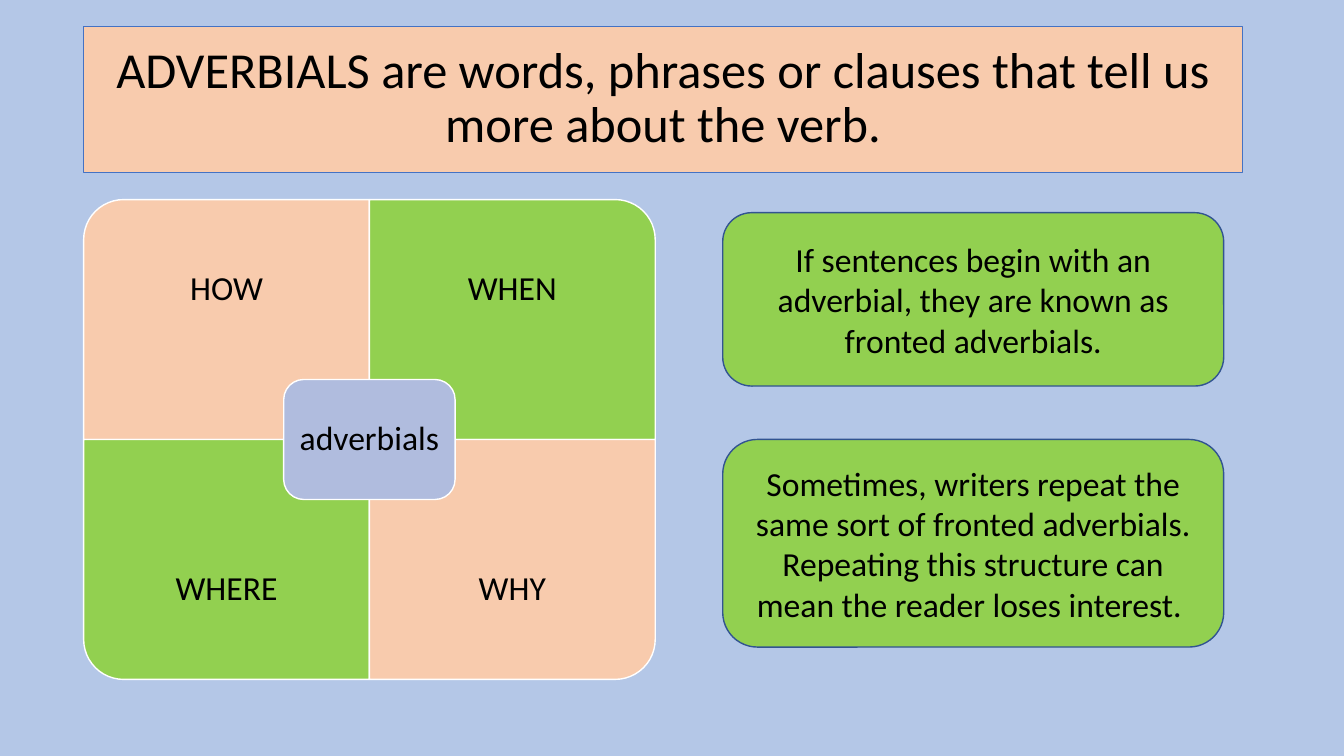
"""Build a slide that explains adverbials with a four-part matrix and two notes."""
import pptx
import pptx.util
import pptx.dml.color
import pptx.enum.shapes
import pptx.enum.text

Inches, Pt = pptx.util.Inches, pptx.util.Pt
SHAPE = pptx.enum.shapes.MSO_SHAPE

PEACH, GREEN, LILAC, SKY = "F8CBAD", "92D050", "B0BCDE", "B4C7E7"
WHITE, BLACK, BLUE, NAVY = "FFFFFF", "000000", "4472C4", "325491"

TITLE = "ADVERBIALS are words, phrases or clauses that tell us more about the verb."
CENTRE = "adverbials"
QUADRANTS = [
    ("HOW", 0, 0, 270, PEACH),
    ("WHEN", 1, 0, 0, GREEN),
    ("WHERE", 0, 1, 180, GREEN),
    ("WHY", 1, 1, 90, PEACH),
]
NOTES = [
    ("If sentences begin with an adverbial, they are known as fronted adverbials.", 2.11, 1.72),
    ("Sometimes, writers repeat the same sort of fronted adverbials. "
     "Repeating this structure can mean the reader loses interest. ", 4.36, 2.06),
]

LEFT, TOP, QUAD_W, QUAD_H = 0.83, 1.98, 2.835, 2.38
LABEL_H = 1.78
HUB_W, HUB_H = 1.7, 1.19
NOTE_X, NOTE_W = 7.17, 4.97


def rgb(color):
    return pptx.dml.color.RGBColor.from_string(color)


def add_box(kind, x, y, w, h, fill, line, weight=1):
    sp = s.shapes.add_shape(kind, Inches(x), Inches(y), Inches(w), Inches(h))
    sp.shadow.inherit = False
    sp.fill.solid()
    sp.fill.fore_color.rgb = rgb(fill)
    sp.line.color.rgb = rgb(line)
    sp.line.width = Pt(weight)
    return sp


def write(sp, text, size=24, spacing=0.9, inset=None):
    tf = sp.text_frame
    tf.word_wrap = True
    tf.vertical_anchor = pptx.enum.text.MSO_ANCHOR.MIDDLE
    if inset is not None:
        tf.margin_left = tf.margin_right = tf.margin_top = tf.margin_bottom = Inches(inset)
    p = tf.paragraphs[0]
    p.text = text
    p.alignment = pptx.enum.text.PP_ALIGN.CENTER
    p.line_spacing = spacing
    font = p.runs[0].font
    font.name, font.size = "Calibri", Pt(size)
    font.color.rgb = rgb(BLACK)


prs = pptx.Presentation()
prs.slide_width, prs.slide_height = Inches(13.333), Inches(7.5)
s = prs.slides.add_slide(prs.slide_layouts[6])
s.background.fill.solid()
s.background.fill.fore_color.rgb = rgb(SKY)

write(add_box(SHAPE.RECTANGLE, LEFT, 0.26, 11.5, 1.45, PEACH, BLUE, 0.75), TITLE, 36)

for label, col, row, angle, fill in QUADRANTS:
    x, y = LEFT + col * QUAD_W, TOP + row * QUAD_H
    w, h = (QUAD_H, QUAD_W) if angle % 180 else (QUAD_W, QUAD_H)
    sp = add_box(SHAPE.ROUND_1_RECTANGLE, x + (QUAD_W - w) / 2, y + (QUAD_H - h) / 2,
                 w, h, fill, WHITE)
    sp.rotation = angle
    label_y = y + row * (QUAD_H - LABEL_H)
    tb = s.shapes.add_textbox(Inches(x), Inches(label_y), Inches(QUAD_W), Inches(LABEL_H))
    write(tb, label, inset=0.19)

hub = add_box(SHAPE.ROUNDED_RECTANGLE, LEFT + QUAD_W - HUB_W / 2, TOP + QUAD_H - HUB_H / 2,
              HUB_W, HUB_H, LILAC, WHITE)
write(hub, CENTRE, inset=0.1)

for text, y, h in NOTES:
    sp = add_box(SHAPE.ROUNDED_RECTANGLE, NOTE_X, y, NOTE_W, h, GREEN, NAVY)
    write(sp, text, spacing=1.0)

prs.save("out.pptx")
